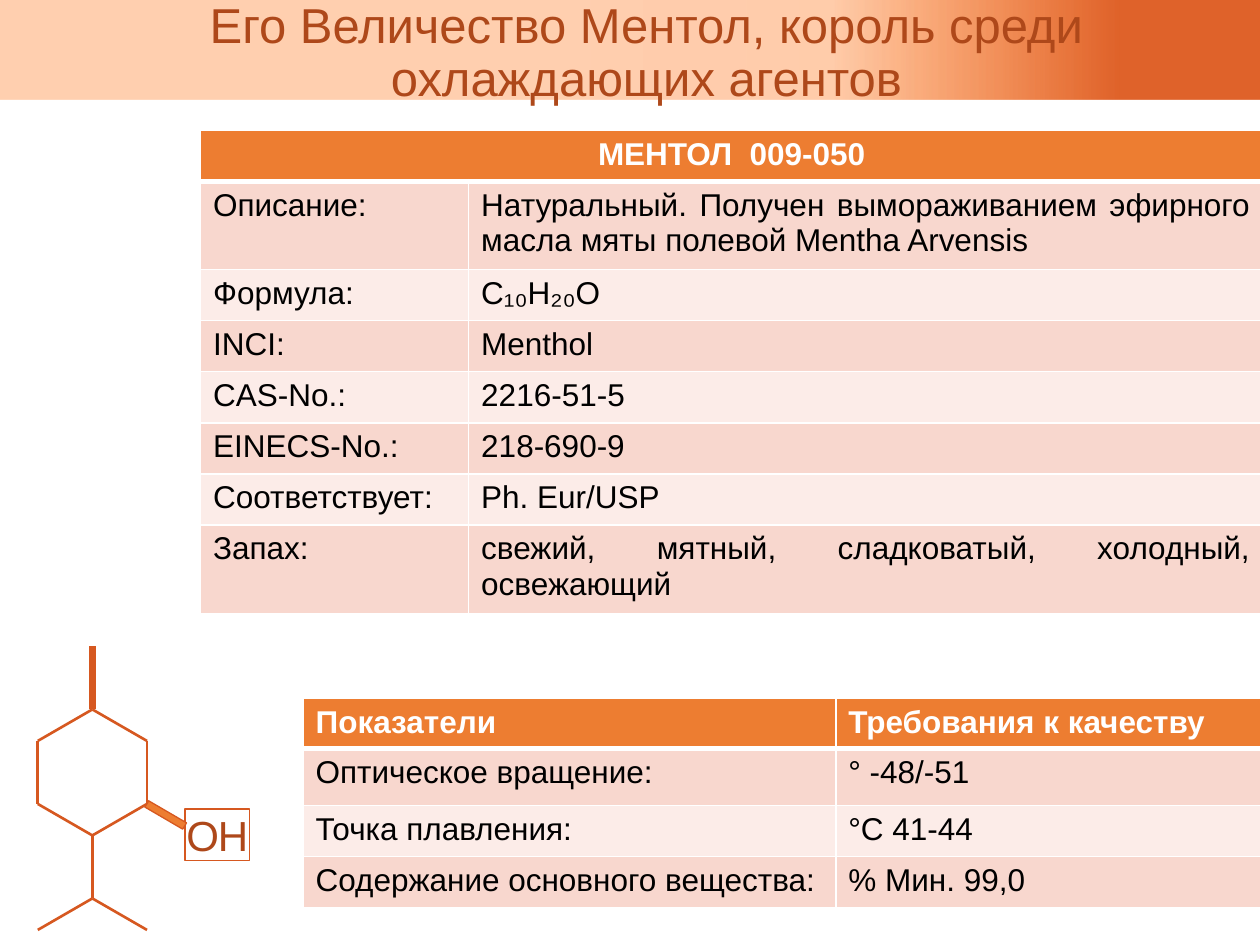
from lxml import etree
from pptx import Presentation
from pptx.dml.color import RGBColor
from pptx.enum.shapes import MSO_CONNECTOR, MSO_SHAPE
from pptx.enum.text import MSO_ANCHOR, PP_ALIGN
from pptx.oxml import parse_xml
from pptx.oxml.ns import qn
from pptx.util import Pt

FONT = "Arial"
RUST, BOND, ORANGE = "AE481A", "D65820", "ED7D31"
BANDS = ("F8D7CE", "FCECE8")
DRAWING_NS = "http://schemas.openxmlformats.org/drawingml/2006/main"
# Position %, colour, opacity %
BANNER_STOPS = ((45, "FF6600", 31), (66, "FF6600", 33), (89, "DF622A", 100))

MENTHOL = [
    ("МЕНТОЛ  009-050", ""),
    ("Описание:", "Натуральный. Получен вымораживанием эфирного масла мяты полевой Mentha Arvensis"),
    ("Формула:", "C₁₀H₂₀O"),
    ("INCI:", "Menthol"),
    ("CAS-No.:", "2216-51-5"),
    ("EINECS-No.:", "218-690-9"),
    ("Соответствует:", "Ph. Eur/USP"),
    ("Запах:", "свежий, мятный, сладковатый, холодный, освежающий"),
]
QUALITY = [
    ("Показатели", "Требования к качеству"),
    ("Оптическое вращение:", "° -48/-51"),
    ("Точка плавления:", "°С 41-44"),
    ("Содержание основного вещества:", "% Мин. 99,0"),
]


def rgb(value):
    return RGBColor.from_string(value)


def write(paragraph, text, size, color, bold=False):
    run = paragraph.add_run()
    run.text = text
    run.font.name = FONT
    run.font.size = Pt(size)
    run.font.bold = bold
    run.font.color.rgb = rgb(color)
    return run


def outline(shape, width):
    shape.line.color.rgb = rgb(BOND)
    shape.line.width = Pt(width)


def add_banner(slide, left, top, width, height):
    # Gradient band
    band = slide.shapes.add_shape(MSO_SHAPE.RECTANGLE, Pt(left), Pt(top), Pt(width), Pt(height))
    band.shadow.inherit = False
    band.line.fill.background()
    stops = "".join(
        f'<a:gs pos="{pos * 1000}"><a:srgbClr val="{color}">'
        f'<a:alpha val="{opacity * 1000}"/></a:srgbClr></a:gs>'
        for pos, color, opacity in BANNER_STOPS
    )
    gradient = parse_xml(
        f'<a:gradFill xmlns:a="{DRAWING_NS}" rotWithShape="1"><a:gsLst>{stops}</a:gsLst>'
        '<a:lin ang="0" scaled="0"/></a:gradFill>'
    )
    band._element.spPr.find(qn("a:prstGeom")).addnext(gradient)

    # Title
    title = slide.shapes.add_textbox(Pt(left + 18.7), Pt(top - 2.9), Pt(width - 18.7), Pt(57.6))
    frame = title.text_frame
    frame.word_wrap = True
    heading = frame.paragraphs[0]
    heading.alignment = PP_ALIGN.CENTER
    heading.line_spacing = 0.9
    write(heading, "Его Величество Ментол, король среди охлаждающих агентов", 28, RUST)


def set_borders(cell, top, bottom):
    properties = cell._tc.get_or_add_tcPr()
    for tag, width in (("lnL", 1), ("lnR", 1), ("lnT", top), ("lnB", bottom)):
        line = etree.SubElement(properties, qn(f"a:{tag}"), w=str(Pt(width)))
        fill = etree.SubElement(line, qn("a:solidFill"))
        etree.SubElement(fill, qn("a:srgbClr"), val="FFFFFF")


def add_banded_table(slide, left, top, columns, heights, rows, justified=()):
    frame = slide.shapes.add_table(
        len(rows), len(columns), Pt(left), Pt(top), Pt(sum(columns)), Pt(sum(heights)))
    table = frame.table
    for column, width in zip(table.columns, columns):
        column.width = Pt(width)
    for r, (row, height) in enumerate(zip(rows, heights)):
        table.rows[r].height = Pt(height)
        header = r == 0
        for c, text in enumerate(row):
            cell = table.cell(r, c)
            set_borders(cell, top=3 if r == 1 else 1, bottom=3 if header else 1)
            cell.fill.solid()
            cell.fill.fore_color.rgb = rgb(ORANGE if header else BANDS[(r - 1) % 2])
            if text:
                paragraph = cell.text_frame.paragraphs[0]
                write(paragraph, text, 18, "FFFFFF" if header else "000000", header)
                if c == 1 and r in justified:
                    paragraph.alignment = PP_ALIGN.JUSTIFY
    return table


def add_molecule(slide, left, top):
    # Regular hexagon with 36 pt bonds
    mid, right = 31.2, 62.4
    methyl, ring_top, ring_bottom, branch = (mid, 0), (mid, 36), (mid, 108), (mid, 144)
    ring = [ring_top, (right, 54), (right, 90), ring_bottom, (0, 90), (0, 54)]
    bonds = [(start, end, 1.5) for start, end in zip(ring, ring[1:] + ring[:1])]
    bonds += [(ring_bottom, branch, 1.5), (branch, (0, 162), 1.5),
              (branch, (right, 162), 1.5), (methyl, ring_top, 3.72)]

    # Hydroxyl label
    label = slide.shapes.add_shape(
        MSO_SHAPE.RECTANGLE, Pt(left + 84.2), Pt(top + 92.9), Pt(36.7), Pt(29.5))
    label.shadow.inherit = False
    label.fill.background()
    outline(label, 0.75)
    frame = label.text_frame
    frame.word_wrap = True
    frame.vertical_anchor = MSO_ANCHOR.TOP
    frame.margin_left = Pt(0.7)
    frame.margin_right = frame.margin_top = frame.margin_bottom = 0
    frame.paragraphs[0].alignment = PP_ALIGN.LEFT
    hydroxyl = write(frame.paragraphs[0], "OH", 24, RUST)
    hydroxyl.font._element.set("spc", "-70")

    # Bonds
    for (x1, y1), (x2, y2), width in bonds:
        bond = slide.shapes.add_connector(
            MSO_CONNECTOR.STRAIGHT, Pt(left + x1), Pt(top + y1), Pt(left + x2), Pt(top + y2))
        outline(bond, width)
        etree.SubElement(bond._element.spPr, qn("a:effectLst"))

    # Thick bond to the hydroxyl group
    corners = [(Pt(left + x), Pt(top + y)) for x, y in (
        (62.4, 90), (61.2, 91.8), (82.8, 104.4), (84.2, 102.3), (85, 100.8), (63.4, 88.2))]
    builder = slide.shapes.build_freeform(*corners[0])
    builder.add_line_segments(corners[1:], close=True)
    wedge = builder.convert_to_shape()
    wedge.shadow.inherit = False
    wedge.fill.solid()
    wedge.fill.fore_color.rgb = rgb(ORANGE)
    outline(wedge, 0.75)


def main():
    deck = Presentation()
    deck.slide_width, deck.slide_height = Pt(720), Pt(540)
    slide = deck.slides.add_slide(deck.slide_layouts[6])

    add_banner(slide, 0, 0, 720, 56.9)
    # Substance card: rows with two lines of text are taller
    card = add_banded_table(
        slide, 114.6, 74.4, (153.2, 453.8), [29.2, 47.4] + [29.2] * 5 + [47.4],
        MENTHOL, justified=(1, 7))
    card.cell(0, 0).merge(card.cell(0, 1))
    card.cell(0, 0).text_frame.paragraphs[0].alignment = PP_ALIGN.CENTER
    add_molecule(slide, 21.6, 369.4)
    # Quality requirements
    add_banded_table(slide, 173.2, 399, (304.4, 246.4), (28.2, 32.4, 29.2, 29.2), QUALITY)

    deck.save("out.pptx")


if __name__ == "__main__":
    main()
